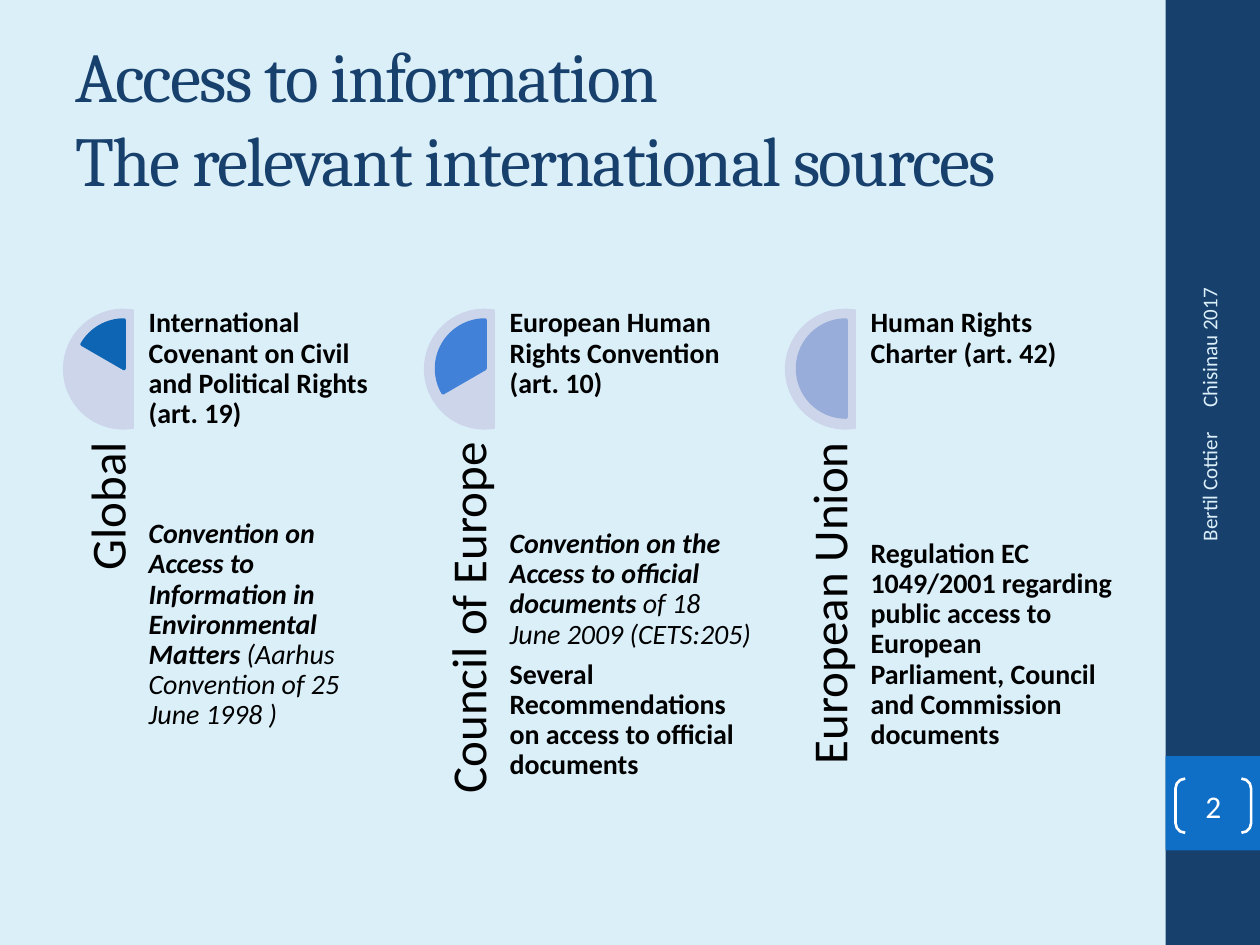
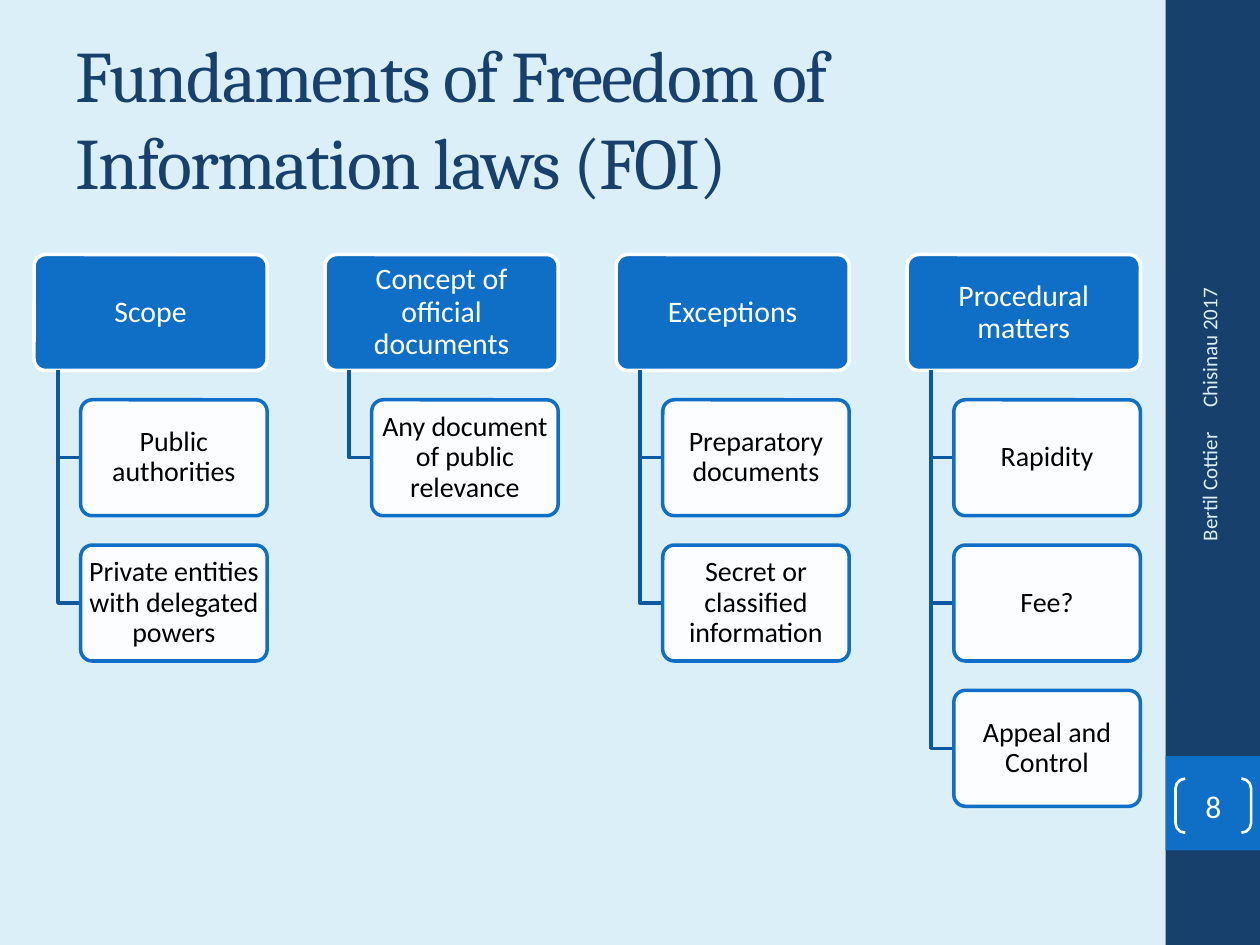
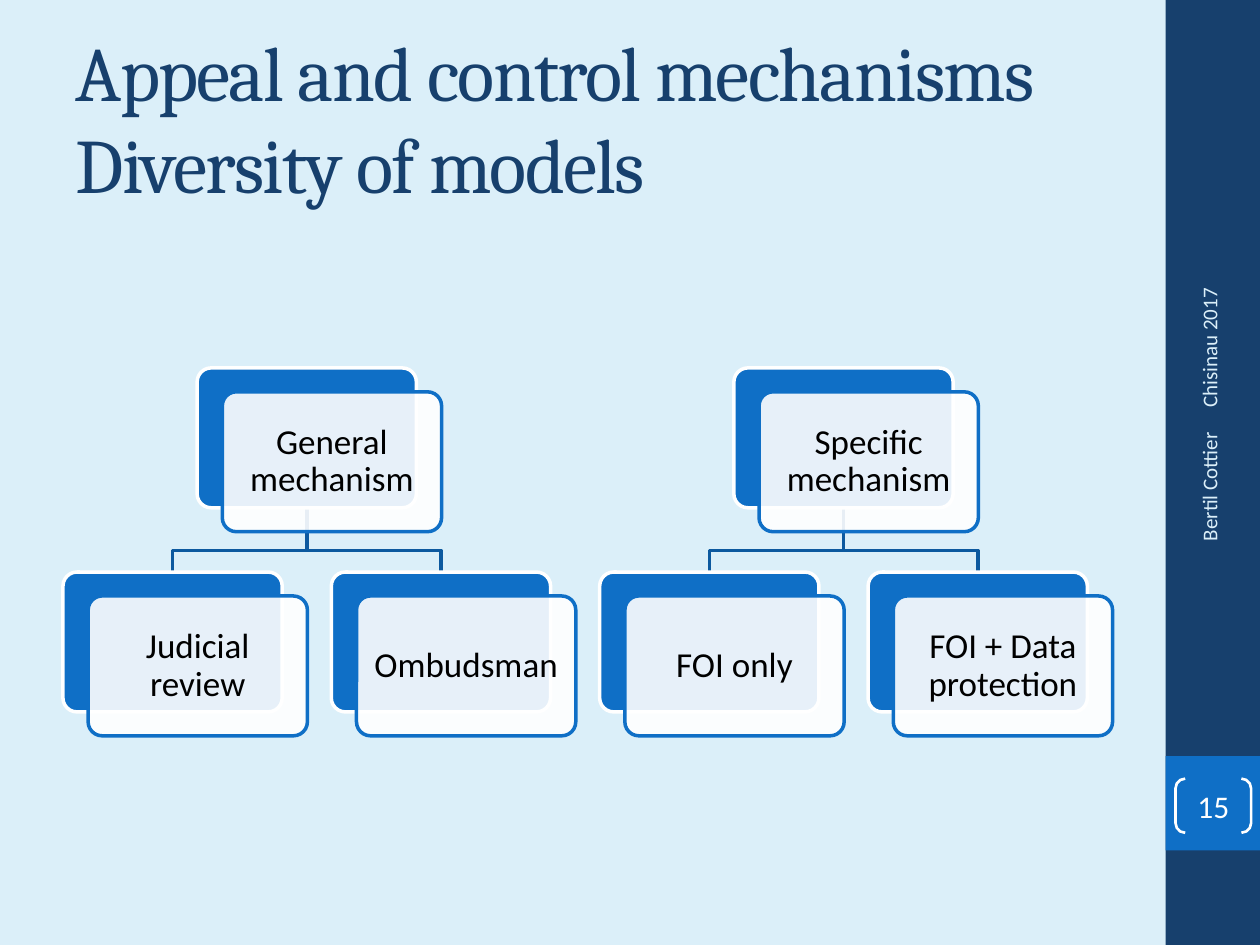
"""Build three slides on access to information law."""
from dataclasses import dataclass

from lxml import etree
from pptx import Presentation
from pptx.dml.color import RGBColor
from pptx.enum.shapes import MSO_SHAPE
from pptx.enum.text import MSO_ANCHOR, MSO_AUTO_SIZE, PP_ALIGN
from pptx.oxml.ns import qn
from pptx.util import Inches, Pt

RECT, ROUND = MSO_SHAPE.RECTANGLE, MSO_SHAPE.ROUNDED_RECTANGLE
CHORD, PIE, BRACKET = MSO_SHAPE.CHORD, MSO_SHAPE.PIE, MSO_SHAPE.DOUBLE_BRACKET
LEFT, CENTER, RIGHT = PP_ALIGN.LEFT, PP_ALIGN.CENTER, PP_ALIGN.RIGHT
TOP, MIDDLE, BOTTOM = MSO_ANCHOR.TOP, MSO_ANCHOR.MIDDLE, MSO_ANCHOR.BOTTOM
NO_FIT = MSO_AUTO_SIZE.NONE


@dataclass(frozen=True)
class Theme:
    """Colours, fonts and type sizes of the deck."""
    back: str = "DBEFF9"
    navy: str = "17406D"
    blue: str = "0F6FC6"
    edge: str = "0C599F"
    pale: str = "CCD5EA"
    white: str = "FFFFFF"
    black: str = "000000"
    serif: str = "Cambria"
    sans: str = "Calibri"
    foot: float = 12
    body: float = 16
    head: float = 17
    page: float = 18
    node: float = 20
    label: float = 28
    tight: float = 0.9


THEME = Theme()

FOOT = [("Chisinau 2017", (8.26, 1.8, 2.67, 0.4), LEFT),
        ("Bertil Cottier", (8.3, 4.43, 2.59, 0.4), RIGHT)]

# Each paragraph is (space before in points, [(text, style), ...]).
SOURCES = [
    ("Global", 126, "0E65B4", [
        (0, [("International Covenant on Civil and Political Rights (art. 19)", "b")]),
        (45.8, [("Convention on Access to Information in Environmental Matters ", "bi"),
                ("(Aarhus Convention of 25 June 1998 )", "i")])]),
    ("Council of Europe", 90, "4181D8", [
        (0, [("European Human Rights Convention (art. 10)", "b")]),
        (68.7, [("Convention on the Access to official documents ", "bi"),
                ("of 18 June 2009 (CETS:205)", "i")]),
        (0, [("Several Recommendations on access to official documents", "b")])]),
    ("European Union", 54, "98ADD9", [
        (0, [("Human Rights Charter (art. 42)", "b")]),
        (91.6, [("Regulation EC 1049/2001 regarding public access to European "
                 "Parliament, Council and Commission documents", "b")])]),
]

PILLARS = [
    ("Scope", ["Public authorities", "Private entities with delegated powers"]),
    ("Concept of official documents", ["Any document of public relevance"]),
    ("Exceptions", ["Preparatory documents", "Secret or classified information"]),
    ("Procedural matters", ["Rapidity", "Fee?", "Appeal and Control"]),
]

MODELS = [
    ("General mechanism", ["Judicial review", "Ombudsman"]),
    ("Specific mechanism", ["FOI only", "FOI + Data protection"]),
]


def rgb(code):
    return RGBColor.from_string(code)


def write(frame, text, size=THEME.body, color=THEME.black, font=THEME.sans,
          align=LEFT, anchor=TOP, pads=(0, 0), line=1.0, after=0):
    """Fill a frame with a string or with a list of styled paragraphs."""
    frame.word_wrap, frame.auto_size = True, NO_FIT
    frame.vertical_anchor = anchor
    frame.margin_left = frame.margin_right = Inches(pads[0])
    frame.margin_top = frame.margin_bottom = Inches(pads[1])
    paras = [(0, [(text, "")])] if isinstance(text, str) else text
    for i, (gap, runs) in enumerate(paras):
        para = frame.add_paragraph() if i else frame.paragraphs[0]
        para.alignment, para.line_spacing = align, line
        para.space_before, para.space_after = Pt(gap), Pt(after)
        for words, style in runs:
            for j, part in enumerate(words.split("\n")):
                if j:
                    para.add_line_break()
                run = para.add_run()
                run.text = part
                run.font.name, run.font.size = font, Pt(size)
                run.font.color.rgb = rgb(color)
                run.font.bold, run.font.italic = "b" in style, "i" in style


def paint(shape, fill=None, line=None, width=2):
    shape.shadow.inherit = False
    if fill:
        shape.fill.solid()
        shape.fill.fore_color.rgb = rgb(fill)
    else:
        shape.fill.background()
    if line:
        shape.line.color.rgb = rgb(line)
        shape.line.width = Pt(width)
    else:
        shape.line.fill.background()


def draw(slide, kind, box, adjust=(), **look):
    shape = slide.shapes.add_shape(kind, *map(Inches, box))
    for i, value in enumerate(adjust):
        shape.adjustments[i] = value
    paint(shape, **look)
    return shape


def label(slide, box, text, turn=0, **form):
    area = slide.shapes.add_textbox(*map(Inches, box))
    area.rotation = turn
    write(area.text_frame, text, **form)


def trace(slide, *points):
    first, *rest = [(Inches(x), Inches(y)) for x, y in points]
    pen = slide.shapes.build_freeform(*first)
    pen.add_line_segments(rest, close=False)
    paint(pen.convert_to_shape(), line=THEME.edge)


def card(slide, box, text="", glass=True, **form):
    """Draw a rounded card, either see-through white or solid blue."""
    fill, line = (THEME.white, THEME.blue) if glass else (THEME.blue, THEME.white)
    shape = draw(slide, ROUND, box, [0.1], fill=fill, line=line)
    if glass:
        tint = shape.element.spPr.find(qn("a:solidFill"))[0]
        etree.SubElement(tint, qn("a:alpha"), val="90000")
    if text:
        write(shape.text_frame, text, align=CENTER, anchor=MIDDLE,
              line=THEME.tight, **form)


def start(deck, title, size, page):
    """Add a slide with its title, side notes and page number."""
    slide = deck.slides.add_slide(deck.slide_layouts[5])
    head = slide.shapes.title
    head.left, head.top, head.width, head.height = map(Inches, (0.5, 0.3, 8.33, 1.25))
    write(head.text_frame, title, size=size, color=THEME.navy, font=THEME.serif,
          anchor=MIDDLE, pads=(0.1, 0.05))
    for props in head.element.iter(qn("a:rPr")):
        props.set("spc", "-100")
    for text, box, align in FOOT:
        label(slide, box, text, turn=270, size=THEME.foot, color=THEME.back,
              align=align, anchor=MIDDLE, pads=(0.1, 0.05))
    mark = draw(slide, BRACKET, (9.33, 6.18, 0.6, 0.43), [0.179],
                line=THEME.white, width=1.5)
    write(mark.text_frame, page, size=THEME.page, color=THEME.white,
          align=CENTER, anchor=MIDDLE)
    return slide


def dress(deck, slide):
    """Set the shared background and move the side bands to the layout."""
    back = deck.slide_master.background.fill
    back.solid()
    back.fore_color.rgb = rgb(THEME.back)
    for box, fill in [((9.25, 0, 0.75, 7.5), THEME.navy),
                      ((9.25, 6, 0.75, 0.75), THEME.blue)]:
        band = draw(slide, RECT, box, fill=fill)
        slide.slide_layout.shapes.element.append(band.element)


def show_sources(slide):
    top = 2.45
    for i, (name, angle, color, paras) in enumerate(SOURCES):
        x = 0.5 + i * 2.865
        draw(slide, CHORD, (x, top, 0.96, 0.96), [48, 168], fill=THEME.pale)
        draw(slide, PIE, (x + 0.1, top + 0.09, 0.77, 0.77), [angle, 162],
             fill=color, line=color)
        label(slide, (x - 1.11, 4.62, 2.8, 0.58), name, turn=270,
              size=THEME.label, align=RIGHT, anchor=BOTTOM, line=THEME.tight)
        label(slide, (x + 0.68, top, 1.93, 3.86), paras,
              line=THEME.tight, after=5.6)


def show_pillars(slide):
    top, wide, high, step = 2.02, 1.85, 0.92, 1.153
    for i, (name, items) in enumerate(PILLARS):
        x = 0.27 + i * 2.31
        stem, inner = x + 0.19, x + 0.37
        card(slide, (x, top, wide, high), name, glass=False, size=THEME.head,
             color=THEME.white, pads=(0.04, 0.02))
        for j, item in enumerate(items, 1):
            y = top + j * step
            mid = y + high / 2
            trace(slide, (stem, top + high), (stem, mid), (inner, mid))
            card(slide, (inner, y, 1.48, high), item, pads=(0.03, 0.02))


def stack(slide, x, y, text):
    wide, high = 1.74, 1.11
    card(slide, (x, y, wide, high), glass=False)
    card(slide, (x + 0.2, y + 0.19, wide, high), text, size=THEME.node,
         pads=(0.08, 0.08))


def show_models(slide):
    top, low, step, half = 2.92, 4.54, 2.13, 0.87
    nodes = []
    for i, (name, leaves) in enumerate(MODELS):
        spots = [0.5 + (i * 2 + j) * step for j in range(2)]
        root = sum(spots) / 2
        nodes.append((root, top, name))
        for x, leaf in zip(spots, leaves):
            trace(slide, (root + half, 4.03), (root + half, 4.37),
                  (x + half, 4.37), (x + half, low))
            nodes.append((x, low, leaf))
    for node in nodes:
        stack(slide, *node)


SLIDES = [
    ("Access to information\nThe relevant international sources", 40, "2", show_sources),
    ("Fundaments of Freedom of Information laws (FOI)", 41.4, "8", show_pillars),
    ("Appeal and control mechanisms\nDiversity of models", 44, "15", show_models),
]


def main():
    deck = Presentation()
    deck.slide_width, deck.slide_height = Inches(10), Inches(7.5)
    for i, (title, size, page, show) in enumerate(SLIDES):
        slide = start(deck, title, size, page)
        if i == 0:
            dress(deck, slide)
        show(slide)
    deck.save("out.pptx")


if __name__ == "__main__":
    main()
